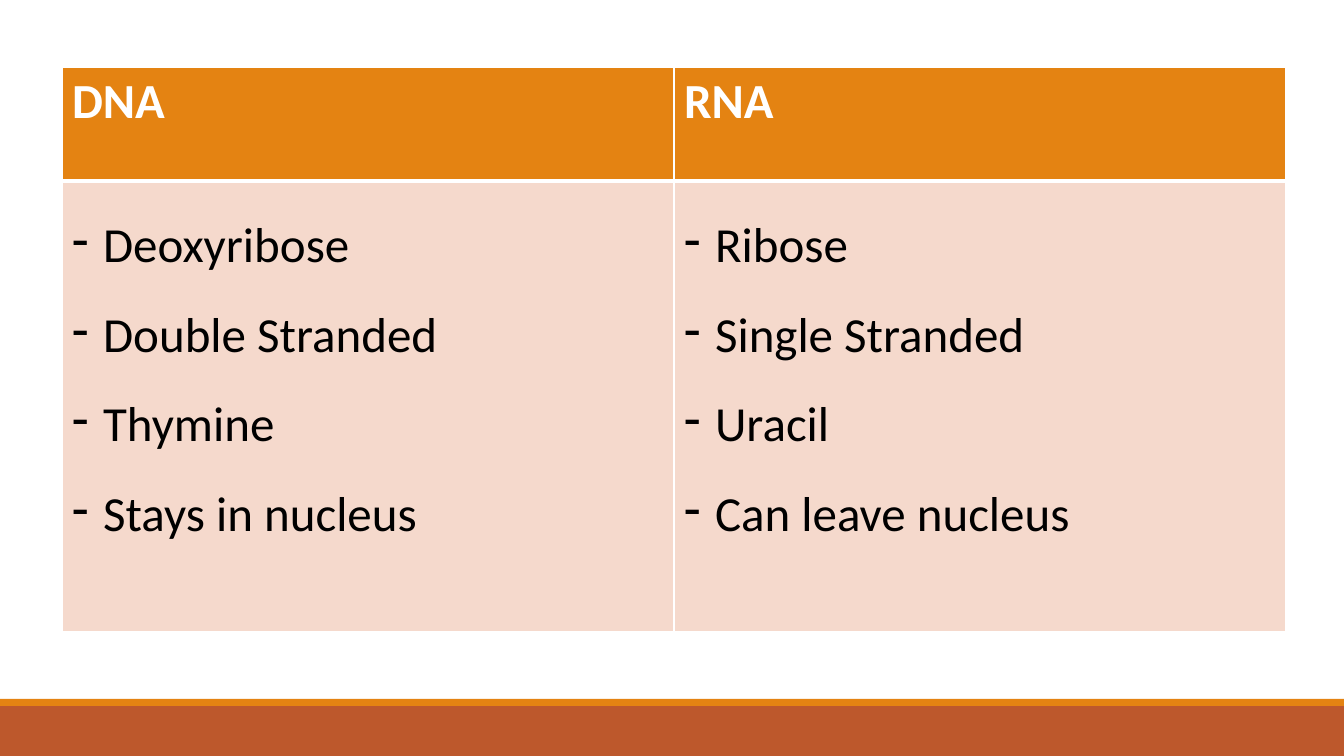
from lxml import etree
from pptx import Presentation
from pptx.dml.color import RGBColor
from pptx.enum.shapes import MSO_SHAPE
from pptx.oxml.ns import qn
from pptx.util import Pt

RECT = MSO_SHAPE.RECTANGLE
EMU_PER_PX = 914400 / 100.8
FONT, SIZE = "Calibri", 35
ORANGE, RUST, PINK = "E48312", "BD582C", "F5D9CC"
WHITE, BLACK = "FFFFFF", "000000"
COLUMNS = {
    "DNA": ["Deoxyribose", "Double Stranded", "Thymine", "Stays in nucleus"],
    "RNA": ["Ribose", "Single Stranded", "Uracil", "Can leave nucleus"],
}


def px(n):
    return round(n * EMU_PER_PX)


def rgb(color):
    return RGBColor.from_string(color)


def add_bar(s, x, y, w, h, color):
    sp = s.shapes.add_shape(RECT, px(x), px(y), px(w), px(h))
    sp.shadow.inherit = False
    sp.fill.solid()
    sp.fill.fore_color.rgb = rgb(color)
    sp.line.fill.background()


def add_footer(s, x, y, w, h):
    stripe = 7
    add_bar(s, x, y + stripe, w, h - stripe, RUST)
    add_bar(s, x, y, w, stripe, ORANGE)


def style_cell(cell, color, widths):
    # Borders come before the fill in the cell properties
    tcPr = cell._tc.get_or_add_tcPr()
    for side, width in zip("LRTB", widths):
        ln = etree.SubElement(tcPr, qn(f"a:ln{side}"), w=str(Pt(width)))
        fill = etree.SubElement(ln, qn("a:solidFill"))
        etree.SubElement(fill, qn("a:srgbClr"), val=WHITE)
    cell.fill.solid()
    cell.fill.fore_color.rgb = rgb(color)


def add_run(p, text, color, bold):
    r = p.add_run()
    r.text = text
    r.font.name, r.font.size, r.font.bold = FONT, Pt(SIZE), bold
    r.font.color.rgb = rgb(color)


def add_bullet(p):
    p.line_spacing = 1.5
    pPr = p._p.get_or_add_pPr()
    pPr.set("marL", str(px(31)))
    pPr.set("indent", str(-px(31)))
    etree.SubElement(pPr, qn("a:buFontTx"))
    etree.SubElement(pPr, qn("a:buChar"), char="-")


def add_comparison(s, x, y, w, h):
    header_h = 114
    table = s.shapes.add_table(2, len(COLUMNS), px(x), px(y), px(w), px(h)).table
    table.rows[0].height = px(header_h)
    table.rows[1].height = px(h - header_h)
    for col, (title, items) in enumerate(COLUMNS.items()):
        table.columns[col].width = px(w / len(COLUMNS))
        # Header cell
        head = table.cell(0, col)
        style_cell(head, ORANGE, (1, 1, 1, 3))
        add_run(head.text_frame.paragraphs[0], title, WHITE, True)
        # Bulleted cell
        body = table.cell(1, col)
        style_cell(body, PINK, (1, 1, 3, 1))
        tf = body.text_frame
        for i, item in enumerate(items):
            p = tf.add_paragraph() if i else tf.paragraphs[0]
            add_bullet(p)
            add_run(p, item, BLACK, False)


def main():
    prs = Presentation()
    prs.slide_width, prs.slide_height = px(1344), px(756)
    s = prs.slides.add_slide(prs.slide_layouts[6])
    add_footer(s, 0, 699, 1344, 57)
    add_comparison(s, 62, 67, 1224, 565)
    prs.save("out.pptx")


if __name__ == "__main__":
    main()
